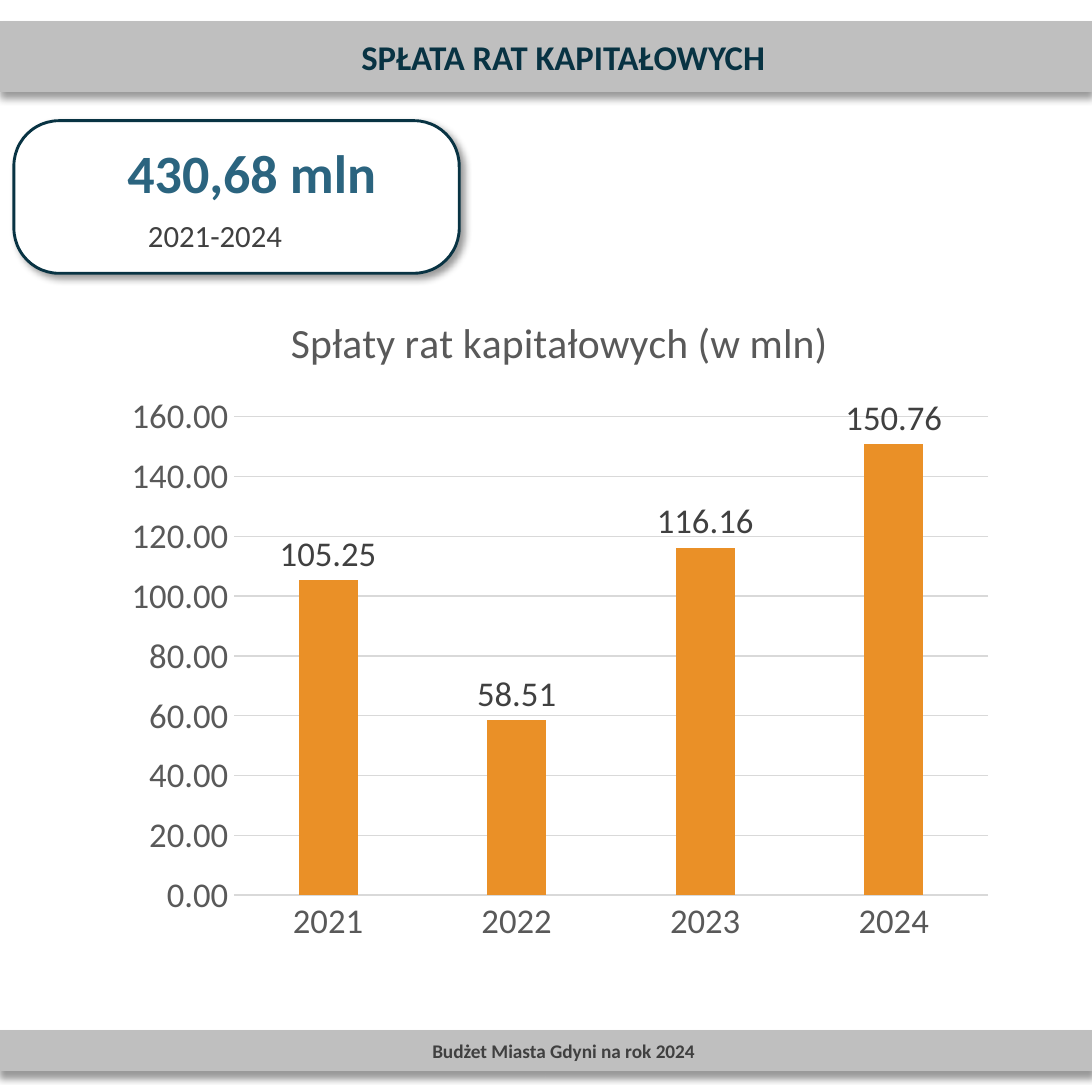
from dataclasses import dataclass

from lxml.etree import SubElement
from pptx import Presentation
from pptx.chart.data import CategoryChartData
from pptx.dml.color import RGBColor
from pptx.enum.chart import XL_CHART_TYPE as ChartType
from pptx.enum.chart import XL_LABEL_POSITION as LabelPosition
from pptx.enum.chart import XL_TICK_MARK as TickMark
from pptx.enum.shapes import MSO_SHAPE as Preset
from pptx.enum.text import MSO_ANCHOR as Anchor
from pptx.enum.text import MSO_AUTO_SIZE as AutoSize
from pptx.enum.text import PP_ALIGN as Align
from pptx.oxml.ns import qn
from pptx.util import Inches, Pt


@dataclass(frozen=True)
class Theme:
    """Colours, font and type sizes of the slide."""

    font: str = "Calibri"
    bar: str = "BFBFBF"
    navy: str = "083343"
    blue: str = "2B647F"
    text: str = "404040"
    axis: str = "595959"
    grid: str = "D9D9D9"
    column: str = "EA9027"
    white: str = "FFFFFF"
    footer_size: float = 10
    period_size: float = 16
    heading_size: float = 18
    chart_size: float = 18
    chart_title_size: float = 21.6
    amount_size: float = 28


THEME = Theme()
SIDE = 7.87


def style_font(font, size, color, bold=False):
    """Set the typeface, size, colour and weight of a font."""
    font.name = THEME.font
    font.size = Pt(size)
    font.bold = bold
    font.color.rgb = RGBColor.from_string(color)


def add_run(paragraph, text, size, color, bold=False):
    """Add one formatted run to a paragraph."""
    run = paragraph.add_run()
    run.text = text
    style_font(run.font, size, color, bold)


def place(shape, box):
    """Move and size a shape to a box given in inches."""
    shape.left, shape.top, shape.width, shape.height = map(Inches, box)


def paint(shape, fill, line, width, angle):
    """Fill and outline a shape and give it a soft shadow."""
    shape.fill.solid()
    shape.fill.fore_color.rgb = RGBColor.from_string(fill)
    shape.line.color.rgb = RGBColor.from_string(line)
    shape.line.width = Pt(width)
    effects = SubElement(shape._element.spPr, qn("a:effectLst"))
    shadow = SubElement(
        effects, qn("a:outerShdw"), blurRad=str(Pt(4)), dist=str(Pt(3)),
        dir=str(angle * 60000), algn="t", rotWithShape="0",
    )
    color = SubElement(shadow, qn("a:srgbClr"), val="000000")
    SubElement(color, qn("a:alpha"), val="40000")


def build_bar(shape, box, text, size, color):
    """Turn a shape into a full-width grey bar with centred bold text."""
    place(shape, box)
    paint(shape, THEME.bar, THEME.bar, 1, 90)
    frame = shape.text_frame
    frame.word_wrap = True
    frame.auto_size = AutoSize.NONE
    frame.vertical_anchor = Anchor.MIDDLE
    frame.margin_left, frame.margin_right = Inches(0.35), Inches(0.1)
    frame.margin_top = frame.margin_bottom = Inches(0.05)
    paragraph = frame.paragraphs[0]
    paragraph.alignment = Align.CENTER
    add_run(paragraph, text, size, color, True)


def build_total_card(slide, box):
    """Group a rounded card with the total amount and its period."""
    left, top, width, height = box
    group = slide.shapes.add_group_shape()
    card = group.shapes.add_shape(Preset.ROUNDED_RECTANGLE, *map(Inches, box))
    card.adjustments[0] = 0.296
    paint(card, THEME.white, THEME.navy, 1.5, 45)

    labels = (
        ((left + 0.72, top + 0.09, 2.05, 0.57), False, Align.LEFT,
         "430,68 mln", THEME.amount_size, THEME.blue, True),
        ((left + 0.31, top + 0.64, 2.28, 0.37), True, Align.CENTER,
         "2021-2024", THEME.period_size, THEME.text, False),
    )
    for label_box, wrap, alignment, text, size, color, bold in labels:
        frame = group.shapes.add_textbox(*map(Inches, label_box)).text_frame
        frame.word_wrap = wrap
        frame.auto_size = AutoSize.SHAPE_TO_FIT_TEXT
        paragraph = frame.paragraphs[0]
        paragraph.alignment = alignment
        add_run(paragraph, text, size, color, bold)


def build_repayment_chart(slide, box):
    """Add the column chart of yearly principal repayments."""
    data = CategoryChartData(number_format="#,##0.00")
    data.categories = ["2021", "2022", "2023", "2024"]
    data.add_series("Spłaty rat kapitałowych", (105.25, 58.51, 116.16, 150.76))
    chart = slide.shapes.add_chart(
        ChartType.COLUMN_CLUSTERED, *map(Inches, box), data
    ).chart
    style_font(chart.font, THEME.chart_size, THEME.axis)
    chart.has_legend = False
    chart.has_title = True
    chart.chart_title.include_in_layout = False
    add_run(chart.chart_title.text_frame.paragraphs[0],
            "Spłaty rat kapitałowych (w mln)",
            THEME.chart_title_size, THEME.axis)

    grid_color = RGBColor.from_string(THEME.grid)
    years, amounts = chart.category_axis, chart.value_axis
    for axis in (years, amounts):
        axis.major_tick_mark = axis.minor_tick_mark = TickMark.NONE
        style_font(axis.tick_labels.font, THEME.chart_size, THEME.axis)
    amounts.minimum_scale, amounts.maximum_scale = 0, 160
    amounts.major_unit = 20
    amounts.tick_labels.number_format = "#,##0.00"
    amounts.tick_labels.number_format_is_linked = False
    amounts.format.line.fill.background()
    for line in (years.format.line, amounts.major_gridlines.format.line):
        line.color.rgb = grid_color
        line.width = Pt(0.75)

    plot = chart.plots[0]
    plot.gap_width, plot.overlap = 219, -27
    plot.vary_by_categories = False
    series = plot.series[0]
    series.format.fill.solid()
    series.format.fill.fore_color.rgb = RGBColor.from_string(THEME.column)
    labels = series.data_labels
    labels.show_value = True
    labels.position = LabelPosition.OUTSIDE_END
    labels.number_format = "#,##0.00"
    labels.number_format_is_linked = False
    style_font(labels.font, THEME.chart_size, THEME.text)


def build_repayment_slide(presentation):
    """Build the slide from its two bars, total card and chart."""
    slide = presentation.slides.add_slide(presentation.slide_layouts[5])
    build_bar(slide.shapes.title, (0, 0.16, SIDE, 0.5),
              "SPŁATA RAT KAPITAŁOWYCH", THEME.heading_size, THEME.navy)
    footer_box = (0, 7.43, SIDE, 0.28)
    footer = slide.shapes.add_shape(Preset.RECTANGLE, *map(Inches, footer_box))
    build_bar(footer, footer_box, "Budżet Miasta Gdyni na rok 2024",
              THEME.footer_size, THEME.text)
    build_total_card(slide, (0.1, 0.87, 3.21, 1.1))
    build_repayment_chart(slide, (0.82, 2.05, 6.43, 4.84))


def main():
    """Create the presentation and save it."""
    presentation = Presentation()
    presentation.slide_width = presentation.slide_height = Inches(SIDE)
    build_repayment_slide(presentation)
    presentation.save("out.pptx")


if __name__ == "__main__":
    main()
